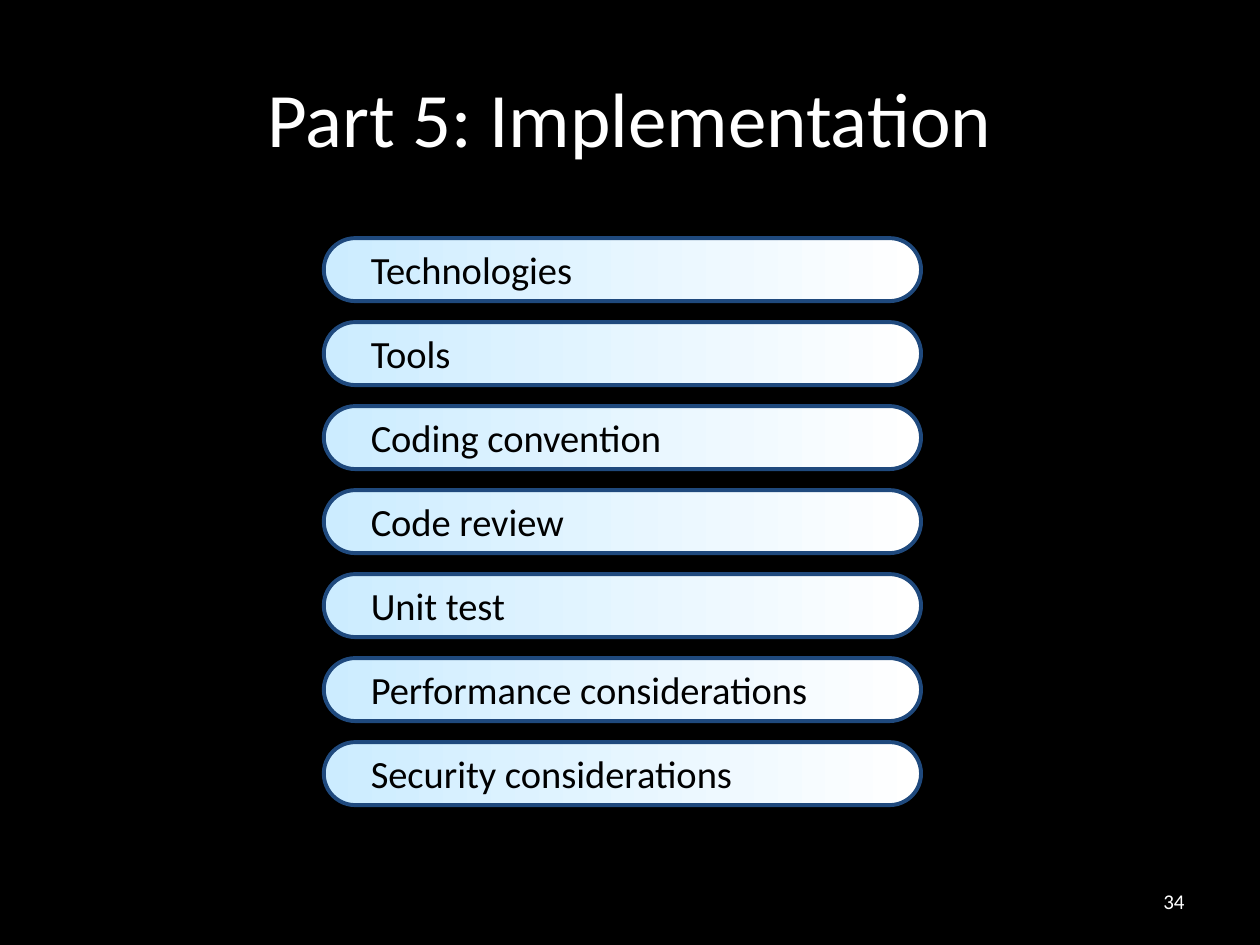
from pptx import Presentation
from pptx.dml.color import RGBColor
from pptx.enum.shapes import MSO_SHAPE
from pptx.enum.text import MSO_ANCHOR, PP_ALIGN
from pptx.util import Inches, Pt

TOPICS = [
    "Technologies",
    "Tools",
    "Coding convention",
    "Code review",
    "Unit test",
    "Performance considerations",
    "Security considerations",
]
FIRST_TOP, ROW_PITCH = 1.89, 2 / 3


def color(value):
    """Turn a hex string into a colour."""
    return RGBColor.from_string(value)


def write(s, text, size, ink, align):
    """Put one vertically centred line of text into a shape."""
    tf = s.text_frame
    tf.word_wrap = True
    tf.vertical_anchor = MSO_ANCHOR.MIDDLE
    p = tf.paragraphs[0]
    p.alignment = align
    r = p.add_run()
    r.text = text
    r.font.name = "Calibri"
    r.font.size = Pt(size)
    r.font.color.rgb = color(ink)


def add_label(slide, box, text, size, align):
    """Add white text directly on the background."""
    s = slide.shapes.add_textbox(*map(Inches, box))
    write(s, text, size, "FFFFFF", align)


def add_topic(slide, row, text):
    """Add a pill with a pale blue gradient on the given row."""
    box = (2.57, FIRST_TOP + row * ROW_PITCH, 4.74, 0.5)
    s = slide.shapes.add_shape(MSO_SHAPE.ROUNDED_RECTANGLE, *map(Inches, box))
    s.shadow.inherit = False
    s.adjustments[0] = 0.5
    s.fill.gradient()
    s.fill.gradient_angle = 0
    for stop, shade in zip(s.fill.gradient_stops, ("CCECFF", "FFFFFF")):
        stop.color.rgb = color(shade)
    s.line.color.rgb = color("1F497D")
    s.line.width = Pt(2.25)
    s.text_frame.margin_left = Inches(0.3)
    write(s, text, 22, "000000", PP_ALIGN.LEFT)


def main():
    """Build the section slide and save it."""
    prs = Presentation()
    prs.slide_width, prs.slide_height = Inches(10), Inches(7.5)
    slide = prs.slides.add_slide(prs.slide_layouts[6])
    slide.background.fill.solid()
    slide.background.fill.fore_color.rgb = color("000000")
    add_label(slide, (0.5, 0.3, 9, 1.25), "Part 5: Implementation", 44, PP_ALIGN.CENTER)
    for row, topic in enumerate(TOPICS):
        add_topic(slide, row, topic)
    add_label(slide, (7.17, 6.95, 2.33, 0.4), "34", 12, PP_ALIGN.RIGHT)
    prs.save("out.pptx")


if __name__ == "__main__":
    main()
